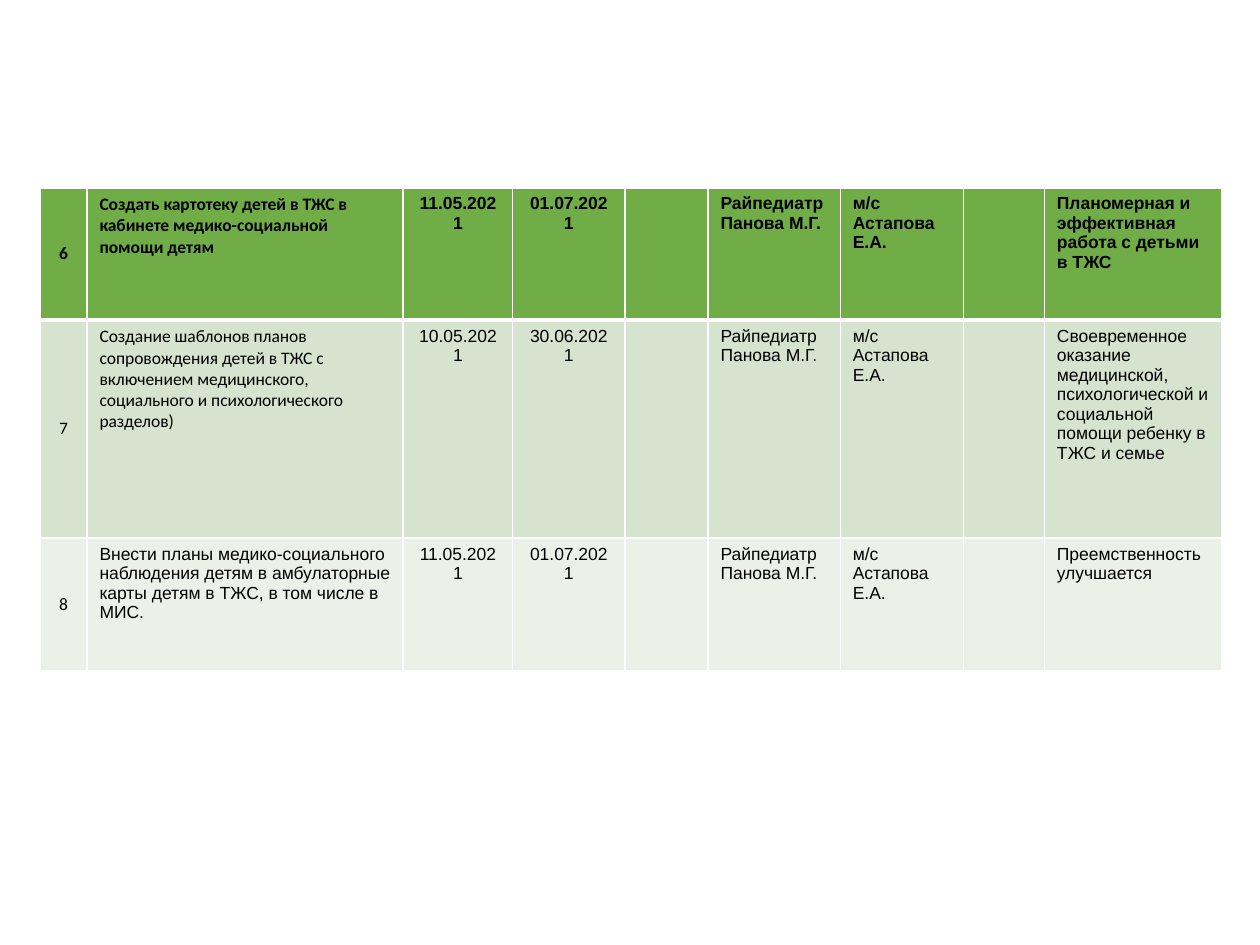
from lxml import etree
from pptx import Presentation
from pptx.dml.color import RGBColor
from pptx.enum.text import MSO_ANCHOR, PP_ALIGN
from pptx.oxml.ns import qn
from pptx.util import Inches, Pt

CENTER, LEFT = PP_ALIGN.CENTER, PP_ALIGN.LEFT
MIDDLE, TOP = MSO_ANCHOR.MIDDLE, MSO_ANCHOR.TOP
BLACK = RGBColor(0x00, 0x00, 0x00)
WHITE = RGBColor(0xFF, 0xFF, 0xFF)
ROW_FILLS = [RGBColor(0x70, 0xAD, 0x47), RGBColor(0xD5, 0xE3, 0xCF), RGBColor(0xEB, 0xF1, 0xE9)]

DOCTOR = "Райпедиатр\nПанова М.Г."
NURSE = "м/с Астапова Е.А."
# number, task, start, end, task font, result
TASKS = [
    ("6", "Создать картотеку детей в ТЖС в кабинете медико-социальной помощи детям",
     "11.05.2021", "01.07.2021", "Calibri",
     "Планомерная и эффективная работа с детьми в ТЖС"),
    ("7", "Создание шаблонов планов сопровождения детей в ТЖС с включением медицинского, "
     "социального и психологического разделов)",
     "10.05.2021", "30.06.2021", "Calibri",
     "Своевременное оказание медицинской, психологической и социальной помощи ребенку в ТЖС и семье"),
    ("8", "Внести планы медико-социального наблюдения детям в амбулаторные карты детям в ТЖС, "
     "в том числе в МИС.",
     "11.05.2021", "01.07.2021", "Arial",
     "Преемственность улучшается"),
]
COL_WIDTHS = [0.37, 2.51, 0.87, 0.89, 0.66, 1.05, 0.98, 0.64, 1.41]
ROW_HEIGHTS = [1.05, 1.73, 1.05]
CENTERED_COLS = (0, 2, 3)


def set_borders(cell, widths):
    """Draw white cell borders; widths maps a side (L, R, T, B) to points."""
    tc_pr = cell._tc.get_or_add_tcPr()
    for i, (side, width) in enumerate(widths.items()):
        ln = etree.Element(qn(f"a:ln{side}"), w=str(Pt(width)))
        fill = etree.SubElement(ln, qn("a:solidFill"))
        etree.SubElement(fill, qn("a:srgbClr"), val=str(WHITE))
        tc_pr.insert(i, ln)


def write_cell(cell, text, font, bold, align):
    tf = cell.text_frame
    for i, line in enumerate(text.split("\n")):
        p = tf.paragraphs[0] if i == 0 else tf.add_paragraph()
        p.alignment = align
        p.font.size = Pt(10)
        if line:
            r = p.add_run()
            r.text = line
            r.font.name = font
            r.font.size = Pt(10)
            r.font.bold = bold
            r.font.color.rgb = BLACK


prs = Presentation()
prs.slide_width, prs.slide_height = Inches(10), Inches(7.5)
s = prs.slides.add_slide(prs.slide_layouts[6])

table = s.shapes.add_table(len(TASKS), len(COL_WIDTHS), Inches(0.32), Inches(1.49),
                           Inches(sum(COL_WIDTHS)), Inches(sum(ROW_HEIGHTS))).table
for column, width in zip(table.columns, COL_WIDTHS):
    column.width = Inches(width)
for row, height in zip(table.rows, ROW_HEIGHTS):
    row.height = Inches(height)

for i, (number, task, start, end, task_font, result) in enumerate(TASKS):
    texts = [number, task, start, end, "", DOCTOR, NURSE, "", result]
    fonts = ["Calibri", task_font] + ["Arial"] * 7
    for j, (text, font) in enumerate(zip(texts, fonts)):
        cell = table.cell(i, j)
        cell.fill.solid()
        cell.fill.fore_color.rgb = ROW_FILLS[i]
        cell.vertical_anchor = MIDDLE if j == 0 else TOP
        set_borders(cell, {"L": 1, "R": 1, "T": 3 if i == 1 else 1, "B": 3 if i == 0 else 1})
        write_cell(cell, text, font, i == 0, CENTER if j in CENTERED_COLS else LEFT)

prs.save("out.pptx")
